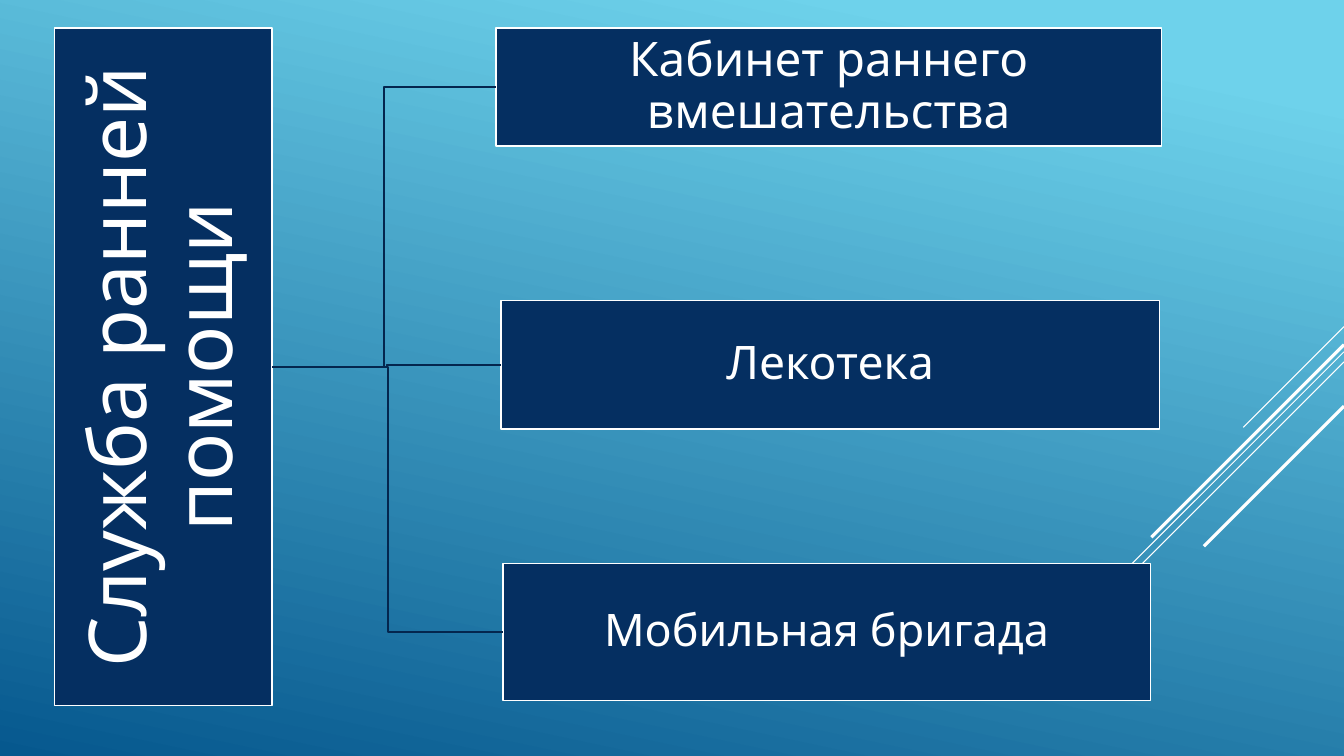
from pptx import Presentation
from pptx.dml.color import RGBColor
from pptx.enum.shapes import MSO_CONNECTOR, MSO_SHAPE
from pptx.enum.text import MSO_ANCHOR, PP_ALIGN
from pptx.oxml.ns import qn
from pptx.util import Inches, Pt

# Content: text, (left, top, width, height), type size
ROOT = ("Служба ранней помощи", (-1.74, 2.56, 6.72, 2.16), 57)
BRANCHES = [
    ("Кабинет раннего вмешательства", (4.92, 0.28, 6.6, 1.17), 34),
    ("Лекотека", (4.97, 2.98, 6.53, 1.28), 33),
    ("Мобильная бригада", (4.99, 5.59, 6.42, 1.36), 32),
]
# Diagonal accents: top y at the right edge, horizontal run, line width
ACCENTS = [
    (3.24, 1.0, 0.75),
    (3.49, 3.26, 0.75),
    (3.59, 2.07, 0.75),
    (3.42, 1.91, 2.25),
    (4.03, 1.39, 2.25),
]
SLIDE_WIDTH, SLIDE_HEIGHT = 13.33, 7.5

THEME = {
    "font": "League Spartan",
    "text": RGBColor.from_string("FFFFFF"),
    "box": RGBColor.from_string("052F61"),
    "outline": RGBColor.from_string("FFFFFF"),
    "link": RGBColor.from_string("04264E"),
    "line_width": 1.25,
    "background": [(0.1, RGBColor.from_string("6ED2EB")),
                   (1.0, RGBColor.from_string("06588E"))],
    "background_angle": 258,
}


def add_box(slide, text, bounds, size, inset, rotation=0):
    shape = slide.shapes.add_shape(MSO_SHAPE.RECTANGLE, *map(Inches, bounds))
    shape.rotation = rotation
    shape.shadow.inherit = False
    shape.fill.solid()
    shape.fill.fore_color.rgb = THEME["box"]
    shape.line.color.rgb = THEME["outline"]
    shape.line.width = Pt(THEME["line_width"])
    frame = shape.text_frame
    frame.word_wrap = True
    frame.vertical_anchor = MSO_ANCHOR.MIDDLE
    frame.margin_left = frame.margin_right = Inches(inset)
    frame.margin_top = frame.margin_bottom = Inches(inset)
    paragraph = frame.paragraphs[0]
    paragraph.alignment = PP_ALIGN.CENTER
    paragraph.line_spacing = 0.9
    run = paragraph.add_run()
    run.text = text
    run.font.name = THEME["font"]
    run.font.size = Pt(size)
    run.font.color.rgb = THEME["text"]
    return shape


def add_line(slide, kind, start, end, color, width):
    points = [Inches(value) for value in (*start, *end)]
    connector = slide.shapes.add_connector(kind, *points)
    connector.line.color.rgb = color
    connector.line.width = Pt(width)
    properties = connector._element.spPr
    properties.append(properties.makeelement(qn("a:effectLst"), {}))
    return connector


def main():
    presentation = Presentation()
    presentation.slide_width = Inches(SLIDE_WIDTH)
    presentation.slide_height = Inches(SLIDE_HEIGHT)
    slide = presentation.slides.add_slide(presentation.slide_layouts[6])

    # Gradient background
    fill = slide.background.fill
    fill.gradient()
    fill.gradient_angle = THEME["background_angle"]
    for stop, (position, color) in zip(fill.gradient_stops, THEME["background"]):
        stop.position = position
        stop.color.rgb = color

    # Diagonal accents, all at 45 degrees from the right edge
    for top, run, width in ACCENTS:
        add_line(slide, MSO_CONNECTOR.STRAIGHT, (SLIDE_WIDTH, top),
                 (SLIDE_WIDTH - run, top + run), THEME["outline"], width)

    # Root box, turned to read upwards: its height becomes its visible width
    text, bounds, size = ROOT
    add_box(slide, text, bounds, size, 0.04, rotation=270)
    left, top, width, height = bounds
    root_side = (left + (width + height) / 2, top + height / 2)

    # Branch boxes, each joined to the root by an elbow
    for text, bounds, size in BRANCHES:
        branch = add_box(slide, text, bounds, size, 0.02)
        left, top, width, height = bounds
        link = add_line(slide, MSO_CONNECTOR.ELBOW, root_side,
                        (left, top + height / 2), THEME["link"], THEME["line_width"])
        link.end_connect(branch, 1)

    presentation.save("out.pptx")


if __name__ == "__main__":
    main()
